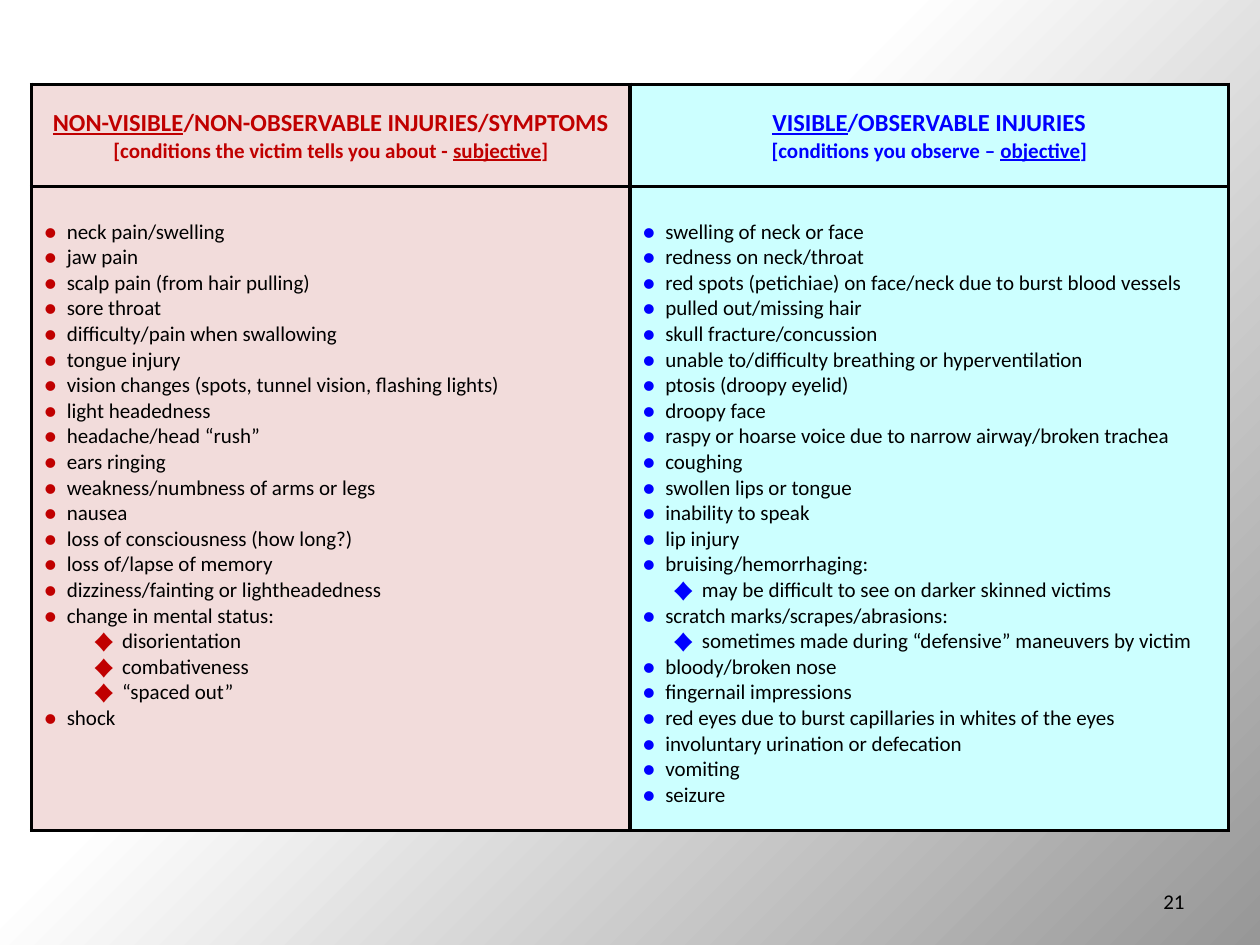
import pptx
import pptx.util
import pptx.dml.color
import pptx.enum.text
import pptx.oxml
import pptx.oxml.ns
from pptx.util import Inches

NS = 'xmlns:a="http://schemas.openxmlformats.org/drawingml/2006/main"'
RED, BLUE, BLACK = "C00000", "0000FF", "000000"
PINK, CYAN = "F2DCDB", "CCFFFF"
BULLET_HANG = 0.18
DIAMOND_HANG = 0.23

COLUMNS = [
    {
        "accent": RED, "fill": PINK, "diamond_left": 0.39,
        "heading": [
            (14, [("NON-VISIBLE", True), ("/NON-OBSERVABLE INJURIES/SYMPTOMS", False)]),
            (12, [("[conditions the victim tells you about - ", False),
                  ("subjective", True), ("]", False)]),
        ],
        "items": [
            "neck pain/swelling", "jaw pain", "scalp pain (from hair pulling)",
            "sore throat", "difficulty/pain when swallowing", "tongue injury",
            "vision changes (spots, tunnel vision, flashing lights)",
            "light headedness", "headache/head “rush”", "ears ringing",
            "weakness/numbness of arms or legs", "nausea",
            "loss of consciousness (how long?)", "loss of/lapse of memory",
            "dizziness/fainting or lightheadedness", "change in mental status:",
            ["disorientation", "combativeness", "“spaced out”"],
            "shock",
        ],
    },
    {
        "accent": BLUE, "fill": CYAN, "diamond_left": 0.24,
        "heading": [
            (14, [("VISIBLE", True), ("/OBSERVABLE INJURIES", False)]),
            (12, [("[conditions you observe – ", False),
                  ("objective", True), ("]", False)]),
        ],
        "items": [
            "swelling of neck or face", "redness on neck/throat",
            "red spots (petichiae) on face/neck due to burst blood vessels",
            "pulled out/missing hair", "skull fracture/concussion",
            "unable to/difficulty breathing or hyperventilation",
            "ptosis (droopy eyelid)", "droopy face",
            "raspy or hoarse voice due to narrow airway/broken trachea",
            "coughing", "swollen lips or tongue", "inability to speak",
            "lip injury", "bruising/hemorrhaging:",
            ["may be difficult to see on darker skinned victims"],
            "scratch marks/scrapes/abrasions:",
            ["sometimes made during “defensive” maneuvers by victim"],
            "bloody/broken nose", "fingernail impressions",
            "red eyes due to burst capillaries in whites of the eyes",
            "involuntary urination or defecation", "vomiting", "seizure",
        ],
    },
]


def rgb(value):
    return pptx.dml.color.RGBColor.from_string(value)


def add_run(paragraph, text, size, color, bold=False, underline=False):
    run = paragraph.add_run()
    run.text = text
    run.font.name = "Calibri"
    run.font.size = pptx.util.Pt(size)
    run.font.color.rgb = rgb(color)
    run.font.bold = bold
    run.font.underline = underline


def next_paragraph(frame):
    first = frame.paragraphs[0]
    return frame.add_paragraph() if first.runs else first


def set_background(slide):
    fill = slide.background.fill
    fill.gradient()
    for stop, position, color in zip(fill.gradient_stops, (0.41, 1), ("FFFFFF", "979797")):
        stop.position = position
        stop.color.rgb = rgb(color)
    gradient = slide.element.find(".//" + pptx.oxml.ns.qn("a:gradFill"))
    corner = pptx.oxml.parse_xml(
        f'<a:path {NS} path="circle"><a:fillToRect r="100000" b="100000"/></a:path>')
    gradient.replace(gradient.find(pptx.oxml.ns.qn("a:lin")), corner)


def style_cell(cell, fill, margin_top):
    properties = cell._tc.get_or_add_tcPr()
    for side in "LRTB":
        properties.append(pptx.oxml.parse_xml(
            f'<a:ln{side} {NS} w="{pptx.util.Pt(2.25)}"><a:solidFill>'
            f'<a:srgbClr val="{BLACK}"/></a:solidFill></a:ln{side}>'))
    cell.fill.solid()
    cell.fill.fore_color.rgb = rgb(fill)
    cell.margin_top = Inches(margin_top)


def add_heading(cell, lines, color):
    for size, parts in lines:
        paragraph = next_paragraph(cell.text_frame)
        paragraph.alignment = pptx.enum.text.PP_ALIGN.CENTER
        for text, underline in parts:
            add_run(paragraph, text, size, color, True, underline)


def add_bullet(cell, text, mark, color, left, hang):
    paragraph = next_paragraph(cell.text_frame)
    properties = paragraph._p.get_or_add_pPr()
    properties.set("marL", str(Inches(left + hang)))
    properties.set("indent", str(-Inches(hang)))
    for xml in (f'<a:buClr {NS}><a:srgbClr val="{color}"/></a:buClr>',
                f'<a:buFont {NS} typeface="Calibri"/>',
                f'<a:buChar {NS} char="{mark}"/>'):
        properties.append(pptx.oxml.parse_xml(xml))
    add_run(paragraph, text, 12, BLACK)


def add_bullets(cell, items, color, diamond_left):
    for item in items:
        if isinstance(item, list):
            for detail in item:
                add_bullet(cell, detail, "♦", color, diamond_left, DIAMOND_HANG)
        else:
            add_bullet(cell, item, "●", color, 0, BULLET_HANG)


def add_injury_table(slide):
    table = slide.shapes.add_table(
        2, len(COLUMNS), Inches(0.25), Inches(0.67), Inches(9.5), Inches(5.92)).table
    table.first_row = False
    table.horz_banding = False
    for row, height in zip(table.rows, (0.81, 5.11)):
        row.height = Inches(height)
    for index, column in enumerate(COLUMNS):
        heading, body = table.cell(0, index), table.cell(1, index)
        style_cell(heading, column["fill"], 0.19)
        style_cell(body, column["fill"], 0.26)
        add_heading(heading, column["heading"], column["accent"])
        add_bullets(body, column["items"], column["accent"], column["diamond_left"])


def add_page_number(slide, number):
    frame = slide.shapes.add_textbox(
        Inches(7.17), Inches(6.95), Inches(2.33), Inches(0.4)).text_frame
    frame.word_wrap = True
    frame.vertical_anchor = pptx.enum.text.MSO_ANCHOR.MIDDLE
    paragraph = frame.paragraphs[0]
    paragraph.alignment = pptx.enum.text.PP_ALIGN.RIGHT
    add_run(paragraph, number, 12, BLACK)


def main():
    presentation = pptx.Presentation()
    presentation.slide_width = Inches(10)
    presentation.slide_height = Inches(7.5)
    slide = presentation.slides.add_slide(presentation.slide_layouts[6])
    set_background(slide)
    add_injury_table(slide)
    add_page_number(slide, "21")
    presentation.save("out.pptx")


if __name__ == "__main__":
    main()
